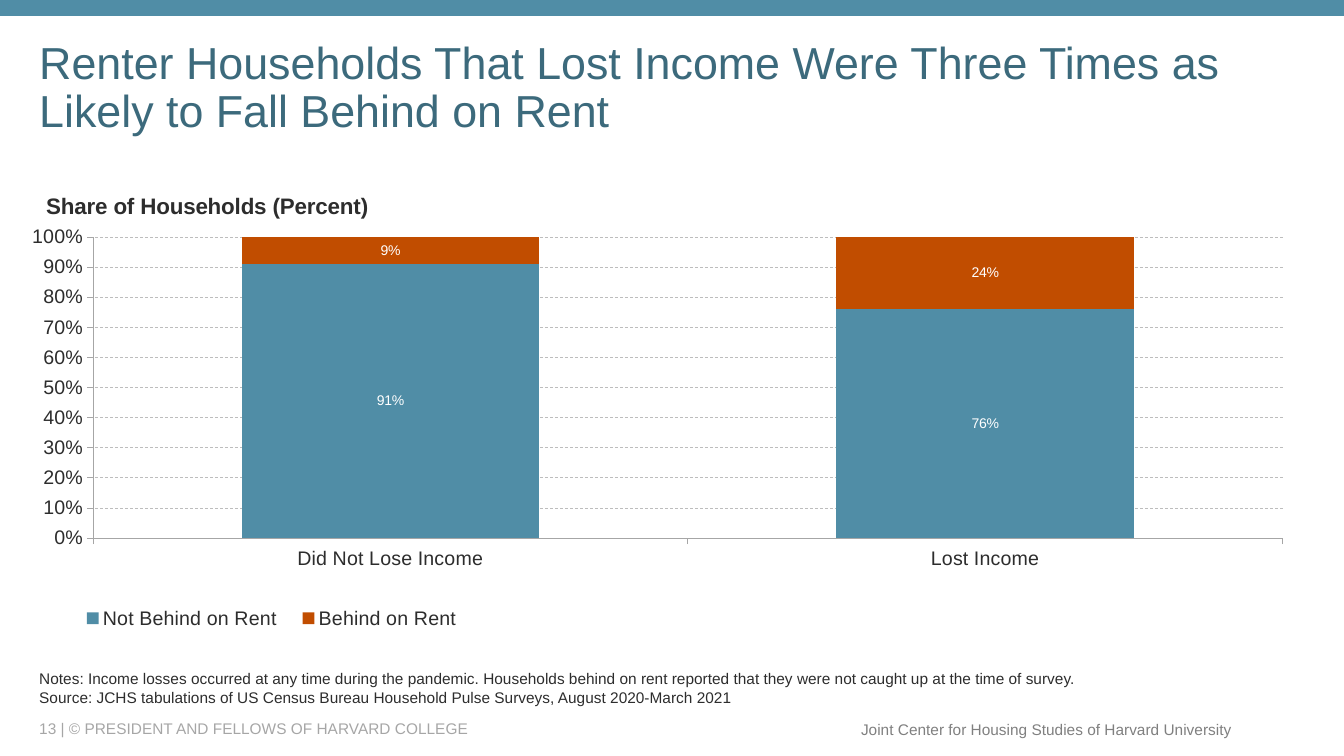
from lxml import etree
from pptx import Presentation
from pptx.chart.data import CategoryChartData
from pptx.dml.color import RGBColor
from pptx.enum.chart import XL_CHART_TYPE, XL_LABEL_POSITION, XL_LEGEND_POSITION, XL_TICK_MARK
from pptx.enum.dml import MSO_LINE
from pptx.enum.shapes import MSO_SHAPE
from pptx.enum.text import MSO_ANCHOR, PP_ALIGN
from pptx.oxml.ns import qn
from pptx.util import Cm, Pt

FONT = "Arial"
COLORS = {
    "teal": "508DA6",
    "title": "3C6A7C",
    "orange": "C14D00",
    "text": "2D2D2D",
    "chart": "5A5A5A",
    "axis": "A6A6A6",
    "grid": "BDBDBD",
    "center": "808080",
    "white": "FFFFFF",
}
LEFT, CONTENT_WIDTH = 0.74, 32.13


def rgb(name):
    return RGBColor.from_string(COLORS[name])


def set_font(font, size, color, bold=False):
    font.name = FONT
    font.size = Pt(size)
    font.bold = bold
    font.color.rgb = rgb(color)


def add_text(slide, box, lines, size, color, anchor=MSO_ANCHOR.MIDDLE,
             align=PP_ALIGN.LEFT, spacing=1.0, wrap=True):
    frame = slide.shapes.add_textbox(*map(Cm, box)).text_frame
    frame.word_wrap = wrap
    frame.vertical_anchor = anchor
    frame.text = "\n".join(lines)
    for paragraph in frame.paragraphs:
        paragraph.alignment = align
        paragraph.line_spacing = spacing
        set_font(paragraph.font, size, color)


def add_band(slide, box, color):
    band = slide.shapes.add_shape(MSO_SHAPE.RECTANGLE, *map(Cm, box))
    band.shadow.inherit = False
    band.fill.solid()
    band.fill.fore_color.rgb = rgb(color)
    band.line.fill.background()


def place(element, index, **settings):
    """Give a chart part a manual layout, as fractions of the chart."""
    for old in element.findall(qn("c:layout")):
        element.remove(old)
    layout = etree.Element(qn("c:layout"))
    manual = etree.SubElement(layout, qn("c:manualLayout"))
    for tag, value in settings.items():
        etree.SubElement(manual, qn(f"c:{tag}")).set("val", str(value))
    element.insert(index, layout)


def style_axis(axis):
    axis.major_tick_mark = XL_TICK_MARK.OUTSIDE
    axis.minor_tick_mark = XL_TICK_MARK.NONE
    axis.format.line.color.rgb = rgb("axis")
    axis.format.line.width = Pt(0.5)
    set_font(axis.tick_labels.font, 14, "text")


def style_series(series, color):
    series.format.fill.solid()
    series.format.fill.fore_color.rgb = rgb(color)
    labels = series.data_labels
    labels.show_value = True
    labels.position = XL_LABEL_POSITION.CENTER
    labels.number_format = "0%"
    labels.number_format_is_linked = False
    set_font(labels.font, 10, "white")


def add_rent_chart(slide, box):
    rent_shares = CategoryChartData(number_format="0%")
    rent_shares.categories = ["Did Not Lose Income", "Lost Income"]
    rent_shares.add_series("Not Behind on Rent", [0.91, 0.76])
    rent_shares.add_series("Behind on Rent", [0.09, 0.24])
    chart = slide.shapes.add_chart(
        XL_CHART_TYPE.COLUMN_STACKED_100, *map(Cm, box), rent_shares).chart
    set_font(chart.font, 10, "chart")

    # Columns
    plot = chart.plots[0]
    plot.gap_width = 100
    plot.overlap = 100
    plot.vary_by_categories = False
    for series, color in zip(plot.series, ("teal", "orange")):
        style_series(series, color)

    # Axes and gridlines
    style_axis(chart.category_axis)
    share_axis = chart.value_axis
    style_axis(share_axis)
    share_axis.minimum_scale, share_axis.maximum_scale = 0, 1
    share_axis.major_unit = 0.1
    share_axis.tick_labels.number_format = "0%"
    share_axis.tick_labels.number_format_is_linked = False
    grid = share_axis.major_gridlines.format.line
    grid.color.rgb = rgb("grid")
    grid.width = Pt(0.5)
    grid.dash_style = MSO_LINE.DASH

    # Heading and legend
    heading = chart.chart_title.text_frame
    heading.text = "Share of Households (Percent)"
    set_font(heading.paragraphs[0].font, 16, "text", bold=True)
    chart.has_legend = True
    legend = chart.legend
    legend.position = XL_LEGEND_POSITION.BOTTOM
    legend.include_in_layout = False
    set_font(legend.font, 14, "text")

    # Positions inside the chart
    chart_part = chart.plots[0]._element.getparent()
    place(chart_part, 0, layoutTarget="inner", xMode="edge", yMode="edge",
          x=0.05, y=0.137, w=0.933, h=0.65)
    place(chart.chart_title._element, 1, xMode="edge", yMode="edge", x=0.01, y=0.03)
    place(legend._element, 1, xMode="edge", yMode="edge", x=0.03, y=0.92, w=0.32, h=0.08)


def main():
    deck = Presentation()
    deck.slide_width, deck.slide_height = Cm(33.87), Cm(19.05)
    slide = deck.slides.add_slide(deck.slide_layouts[6])

    # Top band and title
    add_band(slide, (0, 0, 33.87, 0.4), "teal")
    add_text(slide, (LEFT, 1.02, CONTENT_WIDTH, 2.46),
             ["Renter Households That Lost Income Were Three Times as "
              "Likely to Fall Behind on Rent"], 32, "title", spacing=0.9)

    add_rent_chart(slide, (LEFT, 4.37, CONTENT_WIDTH, 11.68))

    # Notes and footer
    add_text(slide, (LEFT, 16.46, 29.85, 1.47),
             ["Notes: Income losses occurred at any time during the pandemic. Households "
              "behind on rent reported that they were not caught up at the time of survey.",
              "Source: JCHS tabulations of US Census Bureau Household Pulse Surveys, "
              "August 2020-March 2021"], 11, "text", anchor=MSO_ANCHOR.BOTTOM)
    add_text(slide, (LEFT, 18.11, 20.12, 0.51),
             ["13 | © PRESIDENT AND FELLOWS OF HARVARD COLLEGE"], 11, "axis")
    add_text(slide, (21.39, 18.01, 9.91, 0.74),
             ["Joint Center for Housing Studies of Harvard University"],
             11, "center", align=PP_ALIGN.RIGHT, wrap=False)

    deck.save("out.pptx")


if __name__ == "__main__":
    main()
